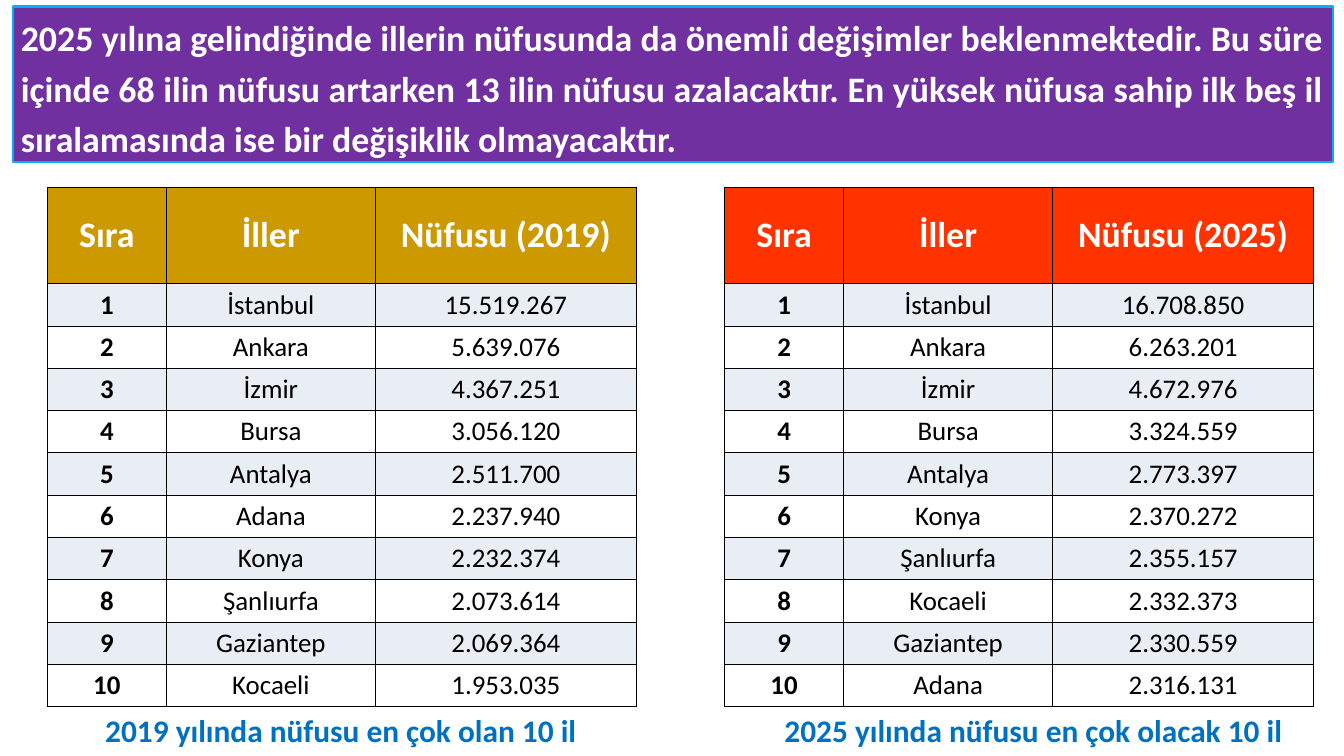
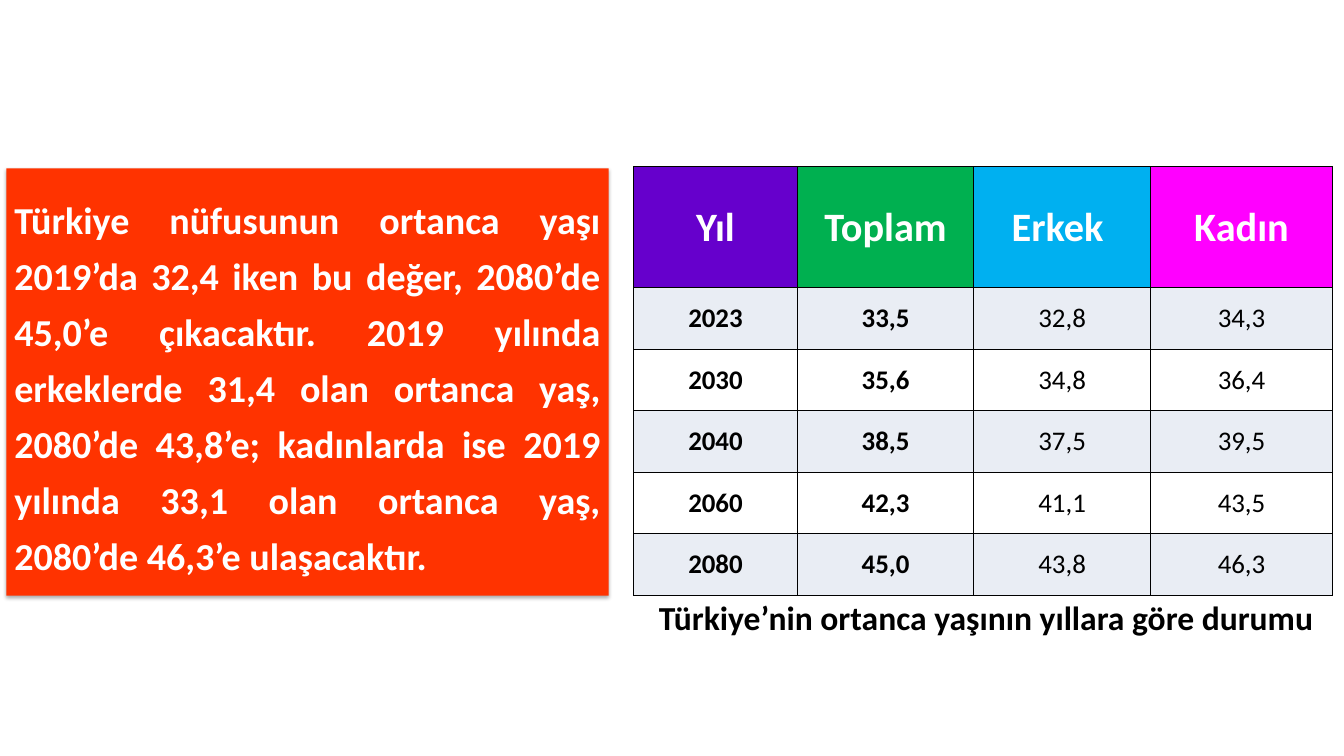
from lxml import etree
from pptx import Presentation
from pptx.dml.color import RGBColor
from pptx.enum.shapes import MSO_SHAPE
from pptx.enum.text import MSO_ANCHOR, MSO_AUTO_SIZE, PP_ALIGN
from pptx.oxml.ns import qn
from pptx.util import Inches, Pt

RECTANGLE = MSO_SHAPE.RECTANGLE
MIDDLE = MSO_ANCHOR.MIDDLE
GROW = MSO_AUTO_SIZE.SHAPE_TO_FIT_TEXT
CENTER, JUSTIFY = PP_ALIGN.CENTER, PP_ALIGN.JUSTIFY

FONT = "Calibri"
WHITE = RGBColor(0xFF, 0xFF, 0xFF)
BLACK = RGBColor(0x00, 0x00, 0x00)
STRIPE = RGBColor(0xE9, 0xED, 0xF4)
PURPLE = RGBColor(0x70, 0x30, 0xA0)
SKY = RGBColor(0x00, 0xB0, 0xF0)
BLUE = RGBColor(0x00, 0x70, 0xC0)
GOLD = RGBColor(0xCC, 0x99, 0x00)
RED = RGBColor(0xFF, 0x33, 0x00)
VIOLET = RGBColor(0x66, 0x00, 0xCC)
GREEN = RGBColor(0x00, 0xB0, 0x50)
MAGENTA = RGBColor(0xFF, 0x00, 0xFF)

POPULATION_TEXT = (
    "2025 yılına gelindiğinde illerin nüfusunda da önemli değişimler beklenmektedir. "
    "Bu süre içinde 68 ilin nüfusu artarken 13 ilin nüfusu azalacaktır. "
    "En yüksek nüfusa sahip ilk beş il sıralamasında ise bir değişiklik olmayacaktır."
)
MEDIAN_AGE_TEXT = (
    "Türkiye nüfusunun ortanca yaşı 2019’da 32,4 iken bu değer, 2080’de 45,0’e "
    "çıkacaktır. 2019 yılında erkeklerde 31,4 olan ortanca yaş, 2080’de 43,8’e; "
    "kadınlarda ise 2019 yılında 33,1 olan ortanca yaş, 2080’de 46,3’e ulaşacaktır."
)
PROVINCES_2019 = [
    ("İstanbul", "15.519.267"), ("Ankara", "5.639.076"), ("İzmir", "4.367.251"),
    ("Bursa", "3.056.120"), ("Antalya", "2.511.700"), ("Adana", "2.237.940"),
    ("Konya", "2.232.374"), ("Şanlıurfa", "2.073.614"), ("Gaziantep", "2.069.364"),
    ("Kocaeli", "1.953.035"),
]
PROVINCES_2025 = [
    ("İstanbul", "16.708.850"), ("Ankara", "6.263.201"), ("İzmir", "4.672.976"),
    ("Bursa", "3.324.559"), ("Antalya", "2.773.397"), ("Konya", "2.370.272"),
    ("Şanlıurfa", "2.355.157"), ("Kocaeli", "2.332.373"), ("Gaziantep", "2.330.559"),
    ("Adana", "2.316.131"),
]
MEDIAN_AGES = [
    ("2023", "33,5", "32,8", "34,3"),
    ("2030", "35,6", "34,8", "36,4"),
    ("2040", "38,5", "37,5", "39,5"),
    ("2060", "42,3", "41,1", "43,5"),
    ("2080", "45,0", "43,8", "46,3"),
]


def write(frame, text, size, color, bold=True, align=CENTER):
    """Put one run of text in the first paragraph and return the paragraph."""
    paragraph = frame.paragraphs[0]
    paragraph.alignment = align
    run = paragraph.add_run()
    run.text = text
    run.font.name = FONT
    run.font.size = Pt(size)
    run.font.bold = bold
    run.font.color.rgb = color
    return paragraph


def add_caption(slide, box, text, size, color, wrap):
    """Add a centred bold caption."""
    frame = slide.shapes.add_textbox(*map(Inches, box)).text_frame
    frame.word_wrap = wrap
    frame.auto_size = GROW
    write(frame, text, size, color)


def add_panel(slide, box, text, size, spacing, fill):
    """Add a filled rectangle with justified white text and return it."""
    panel = slide.shapes.add_shape(RECTANGLE, *map(Inches, box))
    panel.shadow.inherit = False
    panel.fill.solid()
    panel.fill.fore_color.rgb = fill
    panel.line.fill.background()
    panel.text_frame.word_wrap = True
    panel.text_frame.vertical_anchor = MIDDLE
    write(panel.text_frame, text, size, WHITE, align=JUSTIFY).line_spacing = Pt(spacing)
    return panel


def add_drop_shadow(panel):
    """Give the panel a soft shadow below it."""
    effects = panel._element.spPr.find(qn("a:effectLst"))
    shadow = etree.SubElement(
        effects, qn("a:outerShdw"), blurRad=str(Pt(3.5)), dist=str(Pt(2.2)),
        dir="5400000", rotWithShape="0")
    color = etree.SubElement(shadow, qn("a:srgbClr"), val=str(BLACK))
    etree.SubElement(color, qn("a:alpha"), val="32000")


def add_borders(cell):
    """Draw a thin black line on each side of the cell."""
    properties = cell._tc.get_or_add_tcPr()
    for side in ("a:lnL", "a:lnR", "a:lnT", "a:lnB"):
        line = etree.SubElement(properties, qn(side), w=str(Pt(1)))
        fill = etree.SubElement(line, qn("a:solidFill"))
        etree.SubElement(fill, qn("a:srgbClr"), val=str(BLACK))


def fill_cell(cell, text, size, color, bold, fill):
    """Style one table cell and write its text."""
    cell.margin_left = cell.margin_right = Inches(0.17)
    cell.margin_top = cell.margin_bottom = Inches(0.06)
    cell.vertical_anchor = MIDDLE
    add_borders(cell)
    cell.fill.solid()
    cell.fill.fore_color.rgb = fill
    write(cell.text_frame, text, size, color, bold)


def add_data_table(slide, box, widths, header_height, headers, header_fills,
                   header_size, records, bold_columns):
    """Add a striped table with a tall coloured header row."""
    table = slide.shapes.add_table(
        len(records) + 1, len(headers), *map(Inches, box)).table
    table.first_row = table.horz_banding = False
    for column, width in zip(table.columns, widths):
        column.width = Inches(width)
    row_height = (box[3] - header_height) / len(records)
    for index, row in enumerate(table.rows):
        row.height = Inches(row_height if index else header_height)
    for column, (header, fill) in enumerate(zip(headers, header_fills)):
        fill_cell(table.cell(0, column), header, header_size, WHITE, True, fill)
    for index, record in enumerate(records, 1):
        fill = STRIPE if index % 2 else WHITE
        for column, value in enumerate(record):
            fill_cell(table.cell(index, column), value, 24, BLACK,
                      column < bold_columns, fill)


def add_ranking(slide, box, year, color, provinces):
    """Add the table of the ten most populous provinces in a year."""
    records = [(str(rank), *province) for rank, province in enumerate(provinces, 1)]
    add_data_table(slide, box, (1.47, 2.6, 3.23), 1.19,
                   ("Sıra", "İller", f"Nüfusu ({year})"), [color] * 3, 32, records, 1)


def build_population_slide(slide):
    """Compare the province rankings of 2019 and 2025."""
    add_caption(slide, (1.17, 8.78, 6.11, 0.57),
                "2019 yılında nüfusu en çok olan 10 il", 28, BLUE, False)
    add_caption(slide, (9.59, 8.78, 6.45, 0.57),
                "2025 yılında nüfusu en çok olacak 10 il", 28, BLUE, False)
    banner = add_panel(slide, (0.16, 0.08, 16.37, 1.93), POPULATION_TEXT, 32, 45, PURPLE)
    banner.line.color.rgb = SKY
    banner.line.width = Pt(2)
    add_ranking(slide, (0.59, 2.33, 7.3, 6.44), 2019, GOLD, PROVINCES_2019)
    add_ranking(slide, (8.99, 2.33, 7.3, 6.44), 2025, RED, PROVINCES_2025)


def build_median_age_slide(slide):
    """Show the median age by year beside its explanation."""
    add_caption(slide, (7.47, 7.36, 9.53, 0.61),
                "Türkiye’nin ortanca yaşının yıllara göre durumu", 30, BLACK, True)
    add_drop_shadow(add_panel(slide, (0.08, 2.09, 7.47, 5.3), MEDIAN_AGE_TEXT, 34, 50, RED))
    add_data_table(slide, (7.86, 2.07, 8.66, 5.32), (2.03, 2.19, 2.19, 2.26), 1.5,
                   ("Yıl", "Toplam", "Erkek ", "Kadın"),
                   (VIOLET, GREEN, SKY, MAGENTA), 36, MEDIAN_AGES, 2)


def main():
    """Build and save the presentation."""
    presentation = Presentation()
    presentation.slide_width = Inches(16.67)
    presentation.slide_height = Inches(9.38)
    blank = presentation.slide_layouts[6]
    for build in (build_population_slide, build_median_age_slide):
        build(presentation.slides.add_slide(blank))
    presentation.save("out.pptx")


if __name__ == "__main__":
    main()
